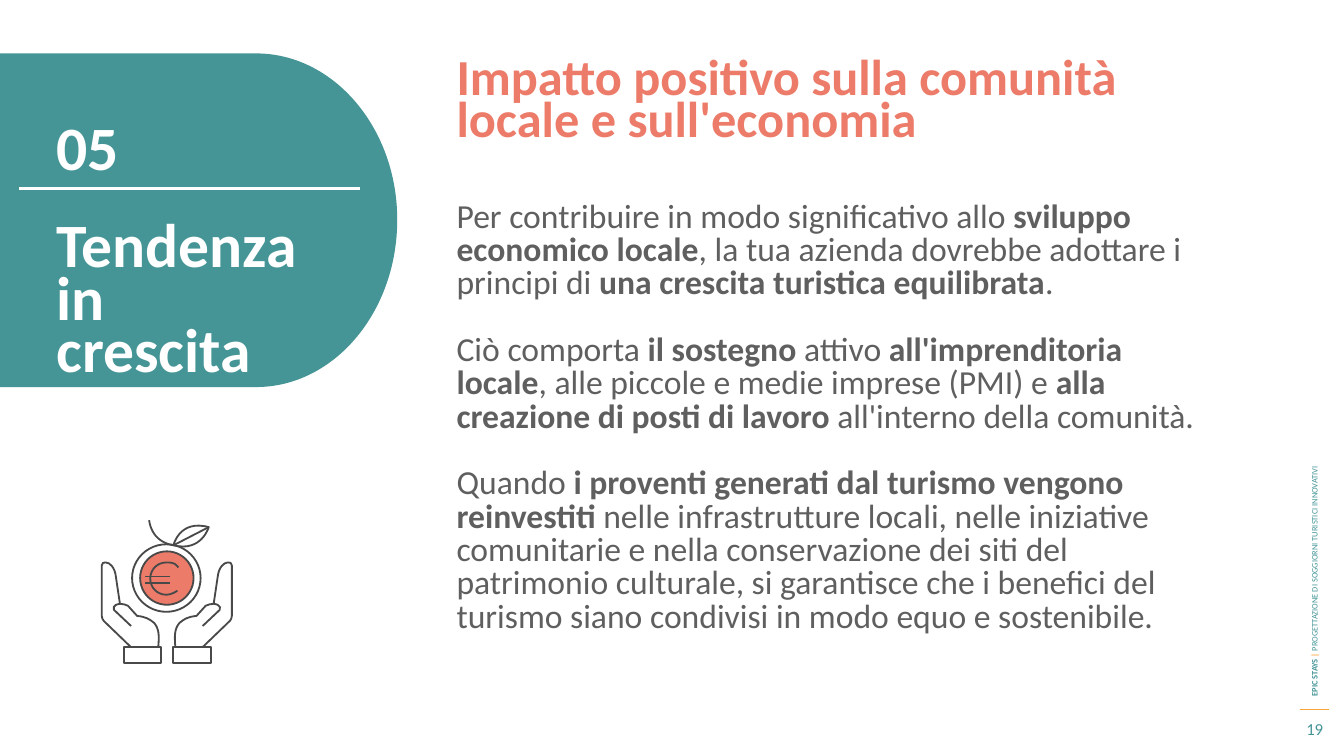
from lxml.etree import SubElement
from pptx import Presentation
from pptx.dml.color import RGBColor
from pptx.enum.shapes import MSO_CONNECTOR, MSO_SHAPE
from pptx.enum.text import MSO_ANCHOR, PP_ALIGN
from pptx.oxml.ns import qn
from pptx.util import Inches, Pt

COLORS = {
    "teal": "459597",
    "coral": "EC7C69",
    "orange": "FBA63D",
    "grey": "5F5F5F",
    "ink": "494949",
    "white": "FFFFFF",
}
ICON_LINE = 1.3
ICON_MIRROR = 3.31


def mirror(outline):
    return [
        tuple(ICON_MIRROR - v if i % 2 == 0 else v for i, v in enumerate(segment))
        for segment in outline
    ]


class SlideBuilder:
    font = "Calibri"

    def __init__(self, slide):
        self.slide = slide

    def color(self, name):
        return RGBColor.from_string(COLORS[name])

    def style(self, shape, fill, line):
        shape.shadow.inherit = False
        if fill:
            shape.fill.solid()
            shape.fill.fore_color.rgb = self.color(fill)
        else:
            shape.fill.background()
        if line:
            shape.line.color.rgb = self.color(line)
            shape.line.width = Pt(ICON_LINE)
        else:
            shape.line.fill.background()

    def text(self, box, paragraphs, size, color, spacing=None, gap=0,
             align=PP_ALIGN.LEFT, anchor=MSO_ANCHOR.TOP, rotation=0):
        shape = self.slide.shapes.add_textbox(*map(Inches, box))
        shape.rotation = rotation
        frame = shape.text_frame
        frame.word_wrap = True
        frame.vertical_anchor = anchor
        for index, runs in enumerate(paragraphs):
            paragraph = frame.add_paragraph() if index else frame.paragraphs[0]
            paragraph.alignment = align
            if spacing:
                paragraph.line_spacing = Pt(spacing)
            if index:
                paragraph.space_before = Pt(gap)
            for words, bold, *accent in runs:
                run = paragraph.add_run()
                run.text = words
                run.font.name = self.font
                run.font.size = Pt(size)
                run.font.bold = bold
                run.font.color.rgb = self.color(accent[0] if accent else color)

    def line(self, start, end, color, width, parent=None):
        shapes = (parent or self.slide).shapes
        connector = shapes.add_connector(
            MSO_CONNECTOR.STRAIGHT, *map(Inches, start + end))
        connector.line.color.rgb = self.color(color)
        connector.line.width = Pt(width)
        SubElement(connector._element.spPr, qn("a:effectLst"))

    def outline(self, segments, fill=None, line="ink", closed=False, parent=None):
        start, *rest = segments
        points = [tuple(map(Inches, segment[i:i + 2]))
                  for segment in rest for i in range(0, len(segment), 2)]
        builder = (parent or self.slide).shapes.build_freeform(*map(Inches, start))
        builder.add_line_segments(points, close=closed)
        shape = builder.convert_to_shape()
        steps = iter(list(shape._element.iter(qn("a:lnTo"))))
        for segment in rest:
            step = next(steps)
            if len(segment) == 6:
                step.tag = qn("a:cubicBezTo")
                for _ in range(2):
                    extra = next(steps)
                    step.append(extra[0])
                    extra.getparent().remove(extra)
        self.style(shape, fill, line)

    def preset(self, kind, box, fill=None, line="ink", parent=None):
        shapes = (parent or self.slide).shapes
        self.style(shapes.add_shape(kind, *map(Inches, box)), fill, line)

    def icon(self):
        group = self.slide.shapes.add_group_shape()
        hand = [
            (2.01, 6.42), (2.28, 6.16), (2.29, 6.15, 2.3, 6.13, 2.3, 6.11),
            (2.3, 5.61), (2.3, 5.59, 2.28, 5.57, 2.26, 5.58),
            (2.22, 5.58, 2.17, 5.63, 2.16, 5.72), (2.12, 5.99),
            (2.09, 5.99, 2.06, 6, 2.04, 6.01), (1.95, 6.11),
            (1.86, 6.12, 1.83, 6.14, 1.78, 6.18),
            (1.73, 6.24, 1.73, 6.31, 1.74, 6.42),
        ]
        thumb = [
            (2.12, 5.99), (2.14, 5.99, 2.15, 6, 2.16, 6),
            (2.18, 6.01, 2.19, 6.03, 2.18, 6.05), (2.01, 6.21),
        ]
        for side, cuff_left in ((list, 1.72), (mirror, 1.23)):
            self.outline(side(hand), parent=group)
            self.preset(MSO_SHAPE.RECTANGLE, (cuff_left, 6.42, 0.37, 0.16), parent=group)
            self.outline(side(thumb), parent=group)

        self.preset(MSO_SHAPE.OVAL, (1.31, 5.4, 0.68, 0.67), parent=group)
        self.preset(MSO_SHAPE.OVAL, (1.39, 5.47, 0.53, 0.53), "coral", parent=group)
        stem = [(1.48, 5.16), (1.48, 5.16, 1.49, 5.37, 1.72, 5.41)]
        leaf = [(1.72, 5.41), (1.72, 5.41, 1.78, 5.15, 2.07, 5.23),
                (2.07, 5.23, 2, 5.48, 1.72, 5.41)]
        euro = [(1.76, 5.86), (1.73, 5.88, 1.69, 5.9, 1.65, 5.9),
                (1.56, 5.9, 1.49, 5.83, 1.49, 5.74),
                (1.49, 5.65, 1.56, 5.58, 1.65, 5.58),
                (1.74, 5.58, 1.74, 5.6, 1.77, 5.63)]
        self.outline(stem, parent=group)
        self.outline(leaf, closed=True, parent=group)
        self.line((2.07, 5.23), (1.72, 5.41), "ink", ICON_LINE, group)
        self.outline(euro, parent=group)
        for bar_y in (5.72, 5.78):
            self.line((1.44, bar_y), (1.69, bar_y), "ink", ICON_LINE, group)


def main():
    deck = Presentation()
    deck.slide_width, deck.slide_height = Inches(13.33), Inches(7.5)
    page = SlideBuilder(deck.slides.add_slide(deck.slide_layouts[6]))

    page.line((12.89, 7.04), (13.18, 7.04), "orange", 0.75)
    page.text((10.15, 4.02, 5.77, 0.2), [[
        ("EPIC STAYS ", True),
        ("| ", True, "orange"),
        ("PROGETTAZIONE DI SOGGIORNI TURISTICI INNOVATIVI", False),
    ]], 6, "teal", anchor=MSO_ANCHOR.MIDDLE, rotation=270)

    panel = [(0, 0.53), (2.54, 0.53), (3.31, 0.53, 3.94, 1.27, 3.94, 2.18),
             (3.94, 3.1, 3.31, 3.84, 2.54, 3.84), (0, 3.84)]
    page.outline(panel, "teal", None, closed=True)
    page.line((0.19, 1.87), (3.57, 1.87), "white", 1.75)
    page.text((0.46, 2.21, 2.7, 1.15), [[("Tendenza in crescita", True)]],
              44, "white", spacing=37.4)
    page.text((0.46, 1.03, 1.31, 0.42), [[("05", True)]], 44, "white")

    page.text((4.43, 0.59, 7.32, 0.88),
              [[("Impatto positivo sulla comunità locale e sull'economia", True)]],
              36, "coral", spacing=29.6)
    page.text((4.43, 1.95, 7.69, 4.13), [
        [("Per contribuire in modo significativo allo ", False),
         ("sviluppo economico locale", True),
         (", la tua azienda dovrebbe adottare i principi di ", False),
         ("una crescita turistica equilibrata", True),
         (".", False)],
        [("Ciò comporta ", False),
         ("il sostegno", True),
         (" attivo ", False),
         ("all'imprenditoria locale", True),
         (", alle piccole e medie imprese (PMI) e ", False),
         ("alla creazione di posti di lavoro ", True),
         ("all'interno della comunità.", False)],
        [("Quando ", False),
         ("i proventi generati dal turismo vengono reinvestiti ", True),
         ("nelle infrastrutture locali, nelle iniziative comunitarie e nella "
          "conservazione dei siti del patrimonio culturale, si garantisce che i "
          "benefici del turismo siano condivisi in modo equo e sostenibile.", False)],
    ], 24, "grey", spacing=23.8, gap=23.8)

    page.text((12.78, 7.06, 0.52, 0.34), [[("19", False)]], 12, "teal",
              align=PP_ALIGN.CENTER, anchor=MSO_ANCHOR.MIDDLE)
    page.icon()
    deck.save("out.pptx")


if __name__ == "__main__":
    main()
